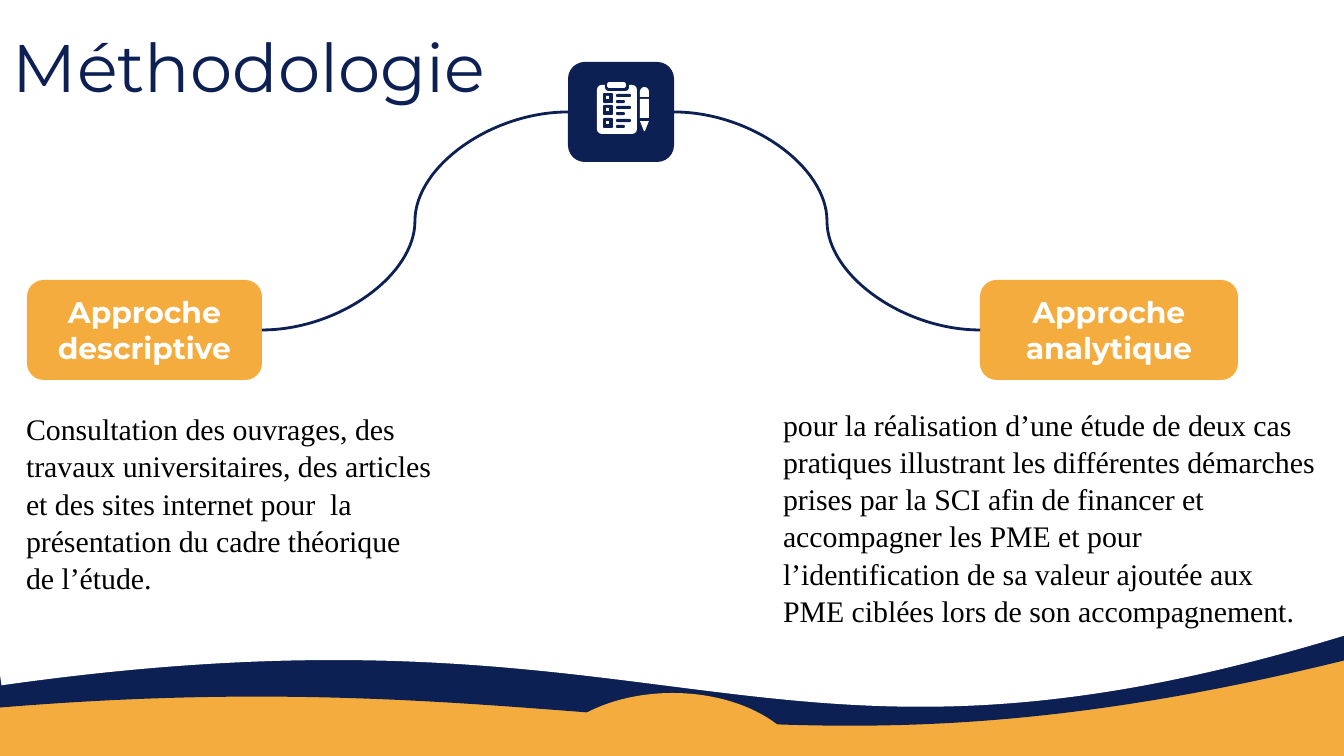
from lxml import etree
from pptx import Presentation
from pptx.dml.color import RGBColor
from pptx.enum.shapes import MSO_CONNECTOR, MSO_SHAPE
from pptx.enum.text import MSO_ANCHOR, PP_ALIGN
from pptx.oxml.ns import qn
from pptx.util import Pt

ROUNDED = MSO_SHAPE.ROUNDED_RECTANGLE
RECTANGLE = MSO_SHAPE.RECTANGLE
ROUND_TOP = MSO_SHAPE.ROUND_2_SAME_RECTANGLE
WAVE = MSO_SHAPE.FLOWCHART_DOCUMENT
PIE = MSO_SHAPE.PIE
CURVE = MSO_CONNECTOR.CURVE
LEFT, CENTER = PP_ALIGN.LEFT, PP_ALIGN.CENTER
MIDDLE = MSO_ANCHOR.MIDDLE

SLIDE_W, SLIDE_H = 1344, 756
EMU_PER_PX = 9144000 / SLIDE_W
INSET = 13
LEFT_SIDE, RIGHT_SIDE = 1, 3

NAVY, ORANGE, WHITE, BLACK = "0C2054", "F3AC3D", "FFFFFF", "000000"
HEADING_FONT, BODY_FONT = "Montserrat", "Times New Roman"


def px(length):
    return round(length * EMU_PER_PX)


def paint(fill, color):
    fill.solid()
    fill.fore_color.rgb = RGBColor.from_string(color)


def finish(shape, color):
    shape.shadow.inherit = False
    paint(shape.fill, color)
    shape.line.fill.background()
    return shape


def add_block(shapes, kind, box, color, adjustments=(), rotation=0, mirrored=False):
    block = finish(shapes.add_shape(kind, *map(px, box)), color)
    for index, value in enumerate(adjustments):
        block.adjustments[index] = value
    block.rotation = rotation
    if mirrored:
        block._element.spPr.xfrm.set("flipH", "1")
    return block


def write(shape, text, size=16, font=BODY_FONT, color=BLACK, bold=False, align=LEFT, spacing=1.0):
    frame = shape.text_frame
    frame.word_wrap = True
    frame.vertical_anchor = MIDDLE
    frame.margin_left = frame.margin_right = px(INSET)
    frame.margin_top = frame.margin_bottom = px(INSET)
    paragraph = frame.paragraphs[0]
    paragraph.alignment = align
    paragraph.line_spacing = spacing
    run = paragraph.add_run()
    run.text = text
    run.font.size = Pt(size)
    run.font.name = font
    run.font.bold = bold
    run.font.color.rgb = RGBColor.from_string(color)


def add_text(slide, box, text, **style):
    write(slide.shapes.add_textbox(*map(px, box)), text, **style)


def add_waves(slide, box):
    x, y, w, h = box
    tilt = 351.9
    add_block(slide.shapes, WAVE, (x - 280, y - 94, w + 477, h + 120), NAVY, rotation=tilt, mirrored=True)
    add_block(slide.shapes, WAVE, (x - 43, y - 118, w + 126, h + 120), WHITE, rotation=tilt, mirrored=True)
    add_block(slide.shapes, PIE, (x + 536, y + 693, 273, 176), ORANGE,
              adjustments=(0, 108.31), rotation=180, mirrored=True)


def add_checklist(slide, box):
    x, y, _, _ = box
    icon = slide.shapes.add_group_shape().shapes

    def part(kind, left, top, width, height, color, *adjustments):
        add_block(icon, kind, (x + left, y + top, width, height), color, adjustments)

    part(ROUNDED, 29, 23, 40, 49, WHITE, 0.12)
    part(ROUNDED, 37, 20, 24, 9, NAVY, 0.4)
    part(ROUNDED, 39, 20, 19, 6, WHITE, 0.4)
    for row in range(3):
        top = 31 + row * 25 // 2
        part(ROUNDED, 35, top, 10, 10, NAVY, 0.15)
        part(RECTANGLE, 38, top + 3, 3, 3, WHITE)
        for offset, width in ((1, 15), (7, 9)):
            part(ROUNDED, 48, top + offset, width, 3, NAVY, 0.5)

    part(ROUND_TOP, 72, 25, 9, 10, WHITE, 0.5, 0)
    part(RECTANGLE, 72, 37, 9, 19, WHITE)
    pen_tip = icon.build_freeform(px(x + 72), px(y + 59))
    pen_tip.add_line_segments([(px(x + 81), px(y + 59)), (px(x + 77), px(y + 69)),
                               (px(x + 76), px(y + 69))], close=True)
    finish(pen_tip.convert_to_shape(), WHITE)


def add_badge(slide, box):
    badge = add_block(slide.shapes, ROUNDED, box, NAVY, (0.167,))
    add_checklist(slide, box)
    return badge


def add_approach(slide, label_box, label, detail_box, detail):
    x, y, _, _ = label_box
    dx, dy, width, height = detail_box
    approach = add_block(slide.shapes, ROUNDED, label_box, ORANGE, (0.167,))
    write(approach, label, font=HEADING_FONT, color=WHITE, bold=True, align=CENTER)
    add_text(slide, (x + dx, y + dy, width, height), detail, spacing=1.04)
    return approach


def add_branch(slide, badge, badge_side, approach, approach_side):
    branch = slide.shapes.add_connector(CURVE, 0, 0, 0, 0)
    branch.begin_connect(badge, badge_side)
    branch.end_connect(approach, approach_side)
    branch.line.color.rgb = RGBColor.from_string(NAVY)
    branch.line.width = Pt(1.5)
    etree.SubElement(branch._element.spPr, qn("a:effectLst"))


def add_methodology(slide, box):
    x, y, _, _ = box
    add_waves(slide, box)
    add_text(slide, (x, y + 30, 1133, 71), "Méthodologie", size=36, font=HEADING_FONT, color=NAVY)
    descriptive = add_approach(
        slide, (x + 27, y + 280, 235, 100), "Approche descriptive", (-14, 101, 435, 243),
        "Consultation des ouvrages, des travaux universitaires, des articles et des sites "
        "internet pour  la présentation du cadre théorique de l’étude.")
    analytic = add_approach(
        slide, (x + 980, y + 280, 258, 100), "Approche analytique", (-210, 118, 560, 237),
        "pour la réalisation d’une étude de deux cas pratiques illustrant les différentes "
        "démarches prises par la SCI afin de financer et accompagner les PME et pour "
        "l’identification de sa valeur ajoutée aux PME ciblées lors de son accompagnement.")
    badge = add_badge(slide, (x + 568, y + 62, 106, 100))
    add_branch(slide, badge, LEFT_SIDE, descriptive, RIGHT_SIDE)
    add_branch(slide, badge, RIGHT_SIDE, analytic, LEFT_SIDE)


def main():
    deck = Presentation()
    deck.slide_width, deck.slide_height = px(SLIDE_W), px(SLIDE_H)
    slide = deck.slides.add_slide(deck.slide_layouts[6])
    paint(slide.background.fill, ORANGE)
    add_methodology(slide, (0, 0, SLIDE_W, SLIDE_H))
    deck.save("out.pptx")


if __name__ == "__main__":
    main()
